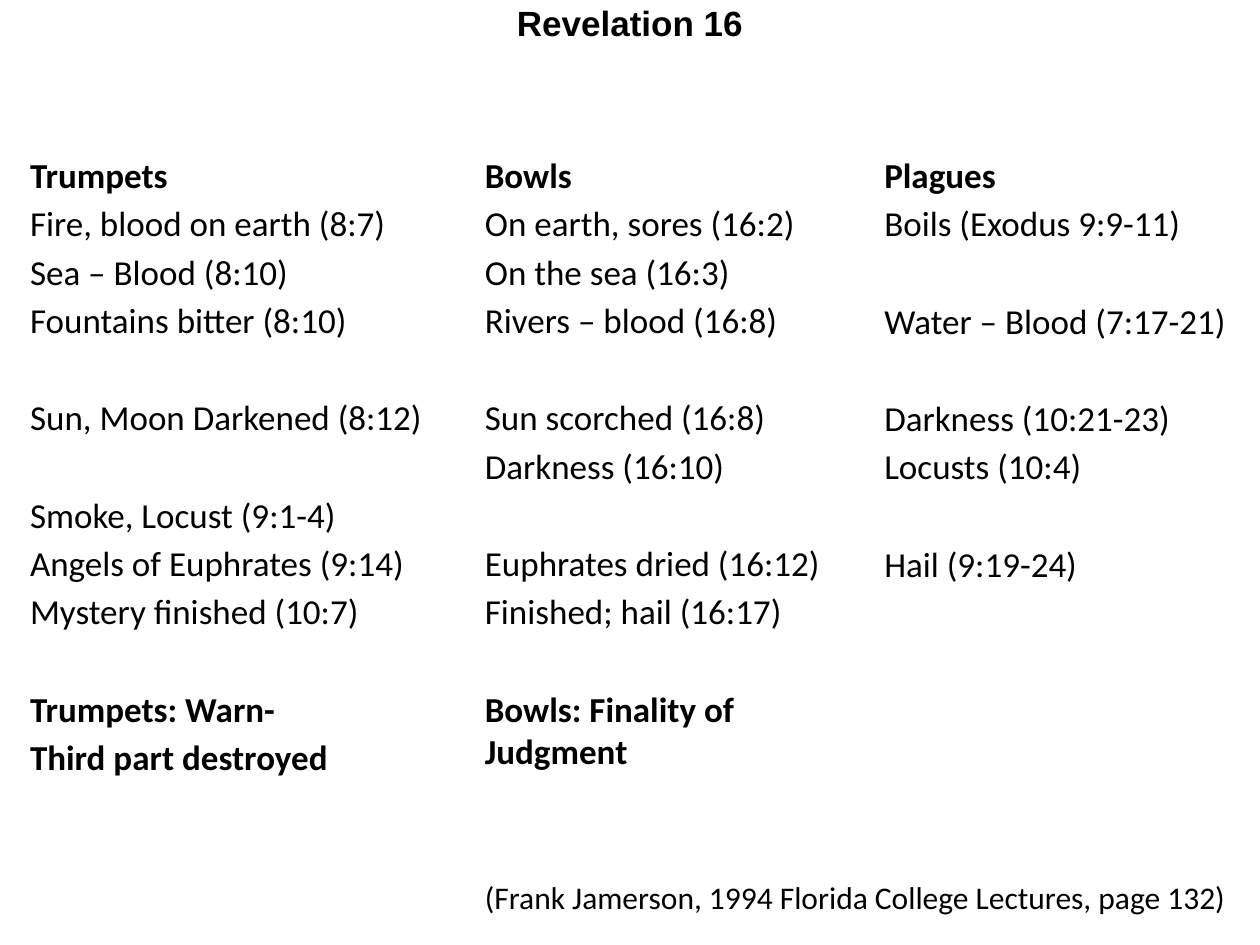
from pptx import Presentation
from pptx.dml.color import RGBColor
from pptx.enum.text import PP_ALIGN
from pptx.util import Inches, Pt

ROW_PITCH = 28  # points from one row of a column to the next
ROW_GAP = 3.6   # points before each row

# Column: left, width, height, rows, number of closing rows in bold; None leaves a row open
BOWLS = (3.75, 2.93, 5.22, [
    "Bowls", "On earth, sores (16:2)", "On the sea (16:3)", "Rivers – blood (16:8)", None,
    "Sun scorched (16:8)", "Darkness (16:10)", None, "Euphrates dried (16:12)",
    "Finished; hail (16:17)", None, "Bowls: Finality of Judgment"], 1)
PLAGUES = (6.92, 2.93, 3.67, [
    "Plagues", "Boils (Exodus 9:9-11)", None, "Water – Blood (7:17-21)", None,
    "Darkness (10:21-23)", "Locusts (10:4)", None, "Hail (9:19-24)"], 0)
TRUMPETS = (0.14, 3.36, 5.28, [
    "Trumpets", "Fire, blood on earth (8:7)", "Sea – Blood (8:10)", "Fountains bitter (8:10)", None,
    "Sun, Moon Darkened (8:12)", None, "Smoke, Locust (9:1-4)", "Angels of Euphrates (9:14)",
    "Mystery finished (10:7)", None, "Trumpets: Warn-", "Third part destroyed"], 2)


def color(hex_string):
    return RGBColor.from_string(hex_string)


class SlideBuilder:
    text_color = "000000"
    fill_color = "FFFFFF"
    body_font = "Calibri"

    def __init__(self, slide):
        self.slide = slide

    def box(self, left, top, width, height):
        shape = self.slide.shapes.add_textbox(
            Inches(left), Inches(top), Inches(width), Inches(height))
        shape.fill.solid()
        shape.fill.fore_color.rgb = color(self.fill_color)
        shape.text_frame.word_wrap = True
        return shape.text_frame

    def set_text(self, paragraph, text, size=20, bold=False, font=body_font):
        paragraph.text = text
        paragraph.font.name = font
        paragraph.font.size = Pt(size)
        paragraph.font.bold = bold
        paragraph.font.color.rgb = color(self.text_color)

    def line(self, left, top, width, height, text, align=PP_ALIGN.LEFT, **style):
        paragraph = self.box(left, top, width, height).paragraphs[0]
        paragraph.alignment = align
        self.set_text(paragraph, text, **style)

    def column(self, left, width, height, rows, closing_rows):
        frame = self.box(left, 1.17, width, height)
        gap = ROW_GAP
        for index, text in enumerate(rows):
            if text is None:
                gap += ROW_PITCH
                continue
            if index == 0:
                paragraph = frame.paragraphs[0]
            else:
                paragraph = frame.add_paragraph()
                paragraph.space_before = Pt(gap)
            bold = index == 0 or index >= len(rows) - closing_rows
            self.set_text(paragraph, text, bold=bold)
            gap = ROW_GAP


def main():
    presentation = Presentation()
    presentation.slide_width = Inches(10)
    presentation.slide_height = Inches(7.5)
    builder = SlideBuilder(presentation.slides.add_slide(presentation.slide_layouts[6]))

    # Columns to compare
    for column in (BOWLS, PLAGUES, TRUMPETS):
        builder.column(*column)

    # Title
    builder.line(0, -0.04, 10, 0.44, "Revelation 16", PP_ALIGN.CENTER, bold=True, font="Arial")

    # Citation
    builder.line(3.75, 6.92, 6.09, 0.4,
                 "(Frank Jamerson, 1994 Florida College Lectures, page 132)", size=18)

    presentation.save("out.pptx")


if __name__ == "__main__":
    main()
